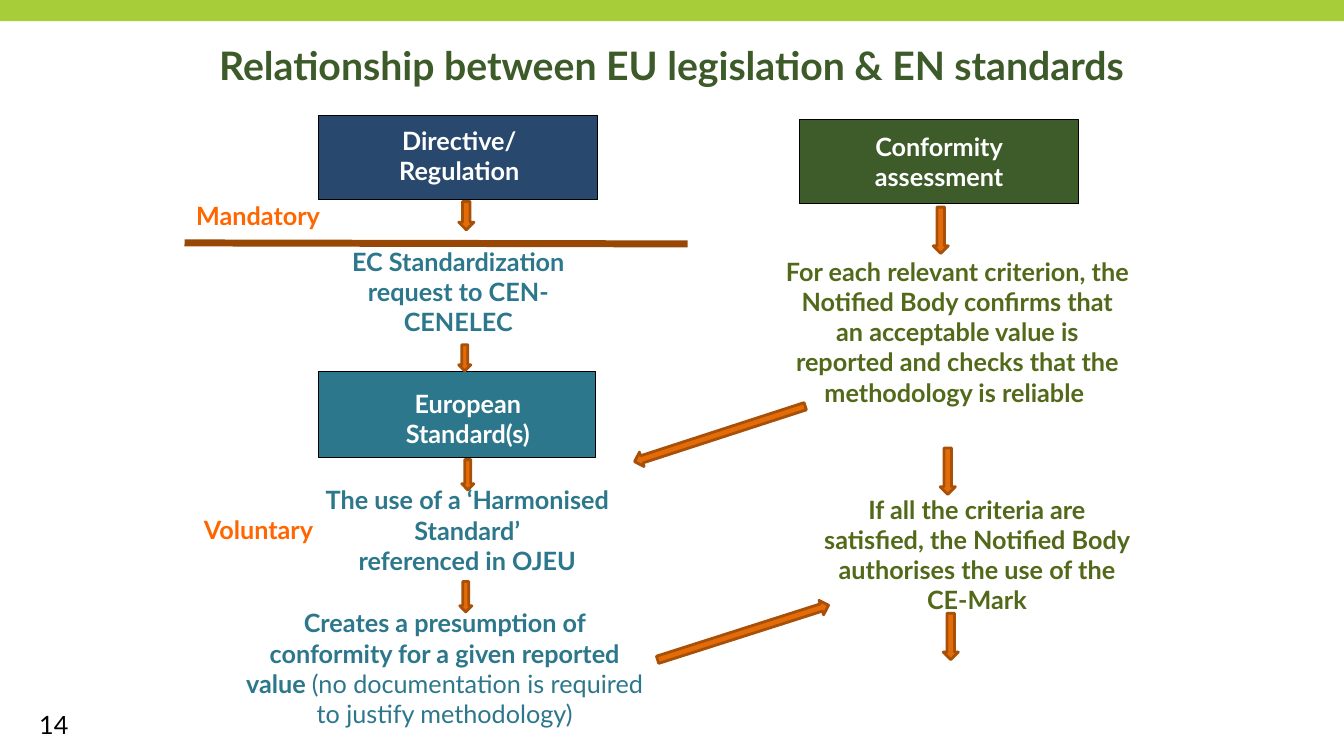
from lxml import etree
from pptx import Presentation
from pptx import util as u
from pptx.dml.color import RGBColor
from pptx.enum import shapes, text
from pptx.oxml.ns import qn

PX = 9144  # 100 px to the inch
COLOURS = {
    "band": "A7CE38", "title": "3D5A29", "black": "000000", "white": "FFFFFF",
    "navy": "28486E", "teal": "2C778B", "forest": "3E5B2A", "olive": "53691A",
    "label": "FF6600", "divider": "974806", "arrow": "E36C09", "arrow edge": "A85007",
}


def colour(name):
    return RGBColor.from_string(COLOURS[name])


def add_block(kind, place, fill, edge=None, width=0):
    block = page.shapes.add_shape(kind, *(n * PX for n in place))
    block.shadow.inherit = False
    block.fill.solid()
    block.fill.fore_color.rgb = colour(fill)
    if edge:
        block.line.color.rgb = colour(edge)
        block.line.width = u.Pt(width)
    else:
        block.line.fill.background()
    return block


def write(frame, wording, ink, size=18, bold=True, align=text.PP_ALIGN.CENTER):
    frame.text = wording
    for para in frame.paragraphs:
        para.alignment = align
        para.font.name = "Lato"
        para.font.size = u.Pt(size)
        para.font.bold = bold
        para.font.color.rgb = colour(ink)


deck = Presentation()
deck.slide_width, deck.slide_height = 1333 * PX, 750 * PX
page = deck.slides.add_slide(deck.slide_layouts[6])

RECTANGLE = shapes.MSO_SHAPE.RECTANGLE
add_block(RECTANGLE, (0, 0, 1333, 21), "band")
add_block(RECTANGLE, (316, 369, 275, 85), "teal", "black", 0.75)
add_block(RECTANGLE, (316, 115, 277, 83), "navy", "black", 0.75)
conformity = add_block(RECTANGLE, (793, 119, 277, 83), "forest", "black", 0.75)
write(conformity.text_frame, "Conformity\nassessment", "white")
conformity.text_frame.word_wrap = False
conformity.text_frame.vertical_anchor = text.MSO_ANCHOR.MIDDLE

divider = page.shapes.add_connector(
    shapes.MSO_CONNECTOR.STRAIGHT, 682 * PX, 242 * PX, 183 * PX, 241 * PX)
divider.line.color.rgb = colour("divider")
divider.line.width = u.Pt(5)
etree.SubElement(divider._element.spPr, qn("a:effectLst"))

captions = {
    "title": ((183, 24, 966, 80), "title",
              "Relationship between EU legislation & EN standards"),
    "number": ((29, 699, 175, 30), "black", "14"),
    "directive": ((373, 119, 165, 71), "white", "Directive/ Regulation"),
    "mandatory": ((177, 194, 158, 40), "label", "Mandatory"),
    "voluntary": ((181, 505, 151, 40), "label", "Voluntary"),
    "request": ((307, 239, 295, 101), "teal",
                "EC Standardization request to CEN-CENELEC"),
    "standards": ((355, 380, 218, 71), "white", "European Standard(s)"),
    "harmonised": ((285, 476, 357, 101), "teal",
                   "The use of a ‘Harmonised Standard’\vreferenced in OJEU"),
    "presumption": ((234, 598, 414, 131), "teal",
                    "Creates a presumption of conformity for a given reported value "),
    "criterion": ((769, 249, 361, 192), "olive",
                  "For each relevant criterion, the Notified Body confirms that an "
                  "acceptable value is reported and checks that the methodology is reliable "),
    "mark": ((806, 485, 326, 131), "olive",
             "If all the criteria are satisfied, the Notified Body authorises "
             "the use of the CE-Mark"),
}
frames = {}
for name, (place, ink, wording) in captions.items():
    box = page.shapes.add_textbox(*(n * PX for n in place))
    frames[name] = box.text_frame
    frames[name].word_wrap = True
    if name == "title":
        write(frames[name], wording, ink, size=28)
        frames[name].vertical_anchor = text.MSO_ANCHOR.MIDDLE
    elif name == "number":
        write(frames[name], wording, ink, bold=False, align=text.PP_ALIGN.LEFT)
    else:
        write(frames[name], wording, ink)

span = frames["presumption"].paragraphs[0].add_run()
span.text = "(no documentation is required to justify methodology)"
span.font.bold = False

DOWN, RIGHT = shapes.MSO_SHAPE.DOWN_ARROW, shapes.MSO_SHAPE.RIGHT_ARROW
arrows = [
    (DOWN, (455, 200, 15, 28), 0),
    (DOWN, (455, 342, 12, 26), 0),
    (DOWN, (458, 456, 12, 30), 0),
    (DOWN, (456, 577, 12, 30), 0),
    (RIGHT, (910, 221, 46, 15), 90),
    (RIGHT, (917, 460, 46, 15), 90),
    (RIGHT, (920, 624, 46, 15), 90),
    (RIGHT, (625, 423, 178, 15), 162),
    (RIGHT, (648, 620, 178, 15), 342.3),
]
for kind, place, turn in arrows:
    add_block(kind, place, "arrow", "arrow edge", 2).rotation = turn

deck.save("out.pptx")
